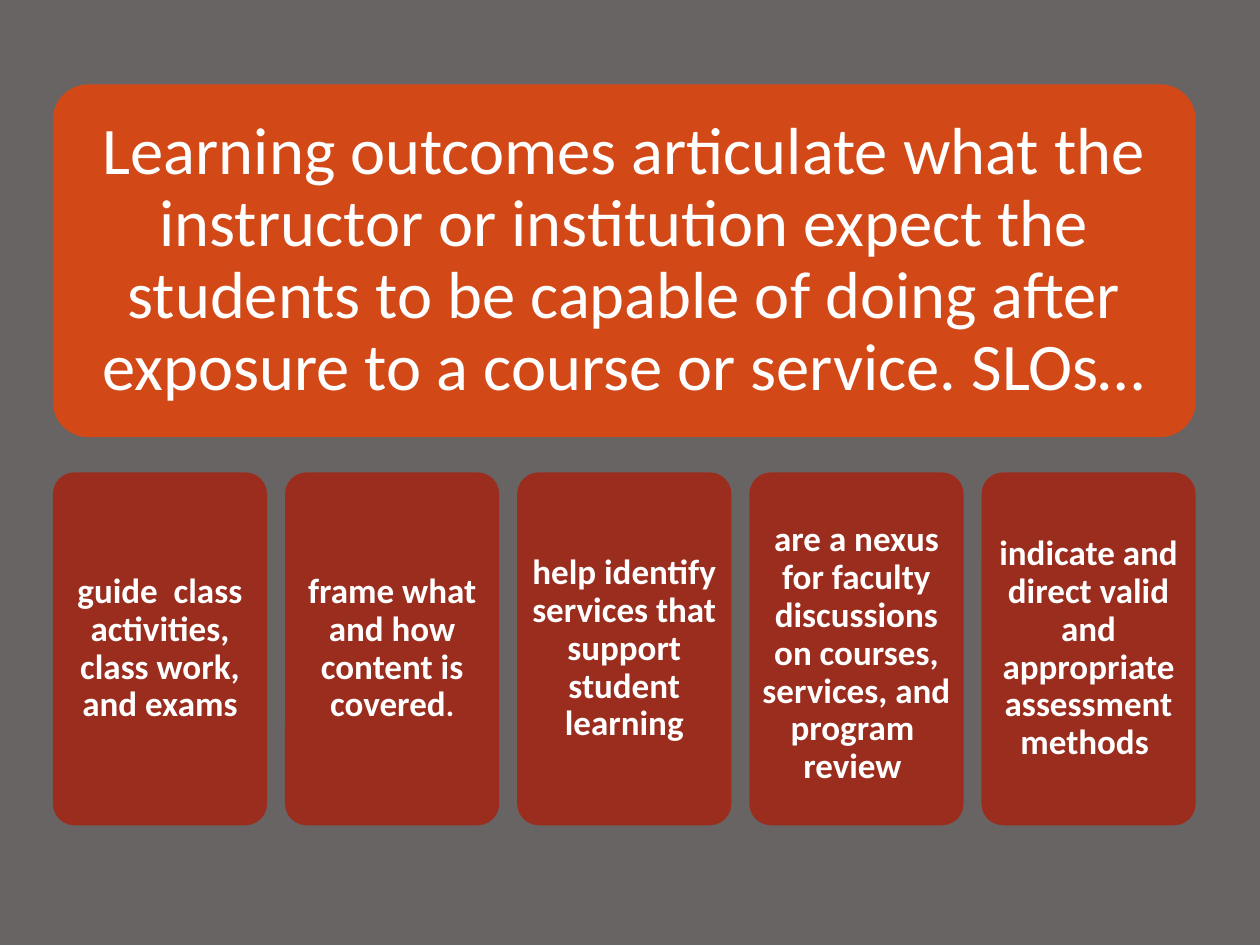
from dataclasses import dataclass

from pptx import Presentation, util as u
from pptx.dml.color import RGBColor
from pptx.enum import shapes, text

GREY = RGBColor(0x69, 0x64, 0x64)
ORANGE = RGBColor(0xD3, 0x48, 0x17)
RED = RGBColor(0x9B, 0x2D, 0x1F)
WHITE = RGBColor(0xFF, 0xFF, 0xFF)

WIDE, HIGH = 10, 7.5
LEFT, SPAN = 0.42, 9.07
TOP, ROW, STEP = 0.67, 2.8, 3.08
COLS, CARD = 5, 1.7
PITCH = (SPAN - CARD) / (COLS - 1)


@dataclass
class Run:
    words: str
    size: float = 20
    bold: bool = True


@dataclass
class Box:
    """A rounded box on the grid; drop is extra room above its text."""
    col: int
    row: int
    runs: list[Run]
    fill: RGBColor = RED
    width: float = CARD
    pad: float = 0.03
    drop: float = 0


BOXES = [
    Box(0, 0, [Run("Learning outcomes articulate what the instructor or "
                   "institution expect the students to be capable of doing "
                   "after exposure to a course or service. SLOs…", 38, False)],
        ORANGE, SPAN, 0.08),
    Box(0, 1, [Run("guide  class activities, class work, and exams")]),
    Box(1, 1, [Run("frame what and how content is covered"), Run(".", 18)]),
    Box(2, 1, [Run("help identify services that support student learning")]),
    Box(3, 1, [Run("are a nexus for faculty discussions on courses, "
                   "services, and program  review ")], drop=0.08),
    Box(4, 1, [Run("indicate and direct valid and appropriate "
                   "assessment methods ")]),
]


def draw(slide, box: Box) -> None:
    shape = slide.shapes.add_shape(
        shapes.MSO_SHAPE.ROUNDED_RECTANGLE,
        u.Inches(LEFT + box.col * PITCH), u.Inches(TOP + box.row * STEP),
        u.Inches(box.width), u.Inches(ROW))
    shape.adjustments[0] = 0.1
    shape.shadow.inherit = False
    shape.fill.solid()
    shape.fill.fore_color.rgb = box.fill
    shape.line.fill.background()

    frame = shape.text_frame
    pad = u.Inches(box.pad)
    look = {"word_wrap": True, "vertical_anchor": text.MSO_ANCHOR.MIDDLE,
            "margin_left": pad, "margin_right": pad, "margin_bottom": pad,
            "margin_top": pad + u.Inches(box.drop)}
    for name, value in look.items():
        setattr(frame, name, value)

    para = frame.paragraphs[0]
    para.alignment = text.PP_ALIGN.CENTER
    para.line_spacing = 0.9
    for item in box.runs:
        run = para.add_run()
        run.text = item.words
        style = {"name": "Calibri", "size": u.Pt(item.size), "bold": item.bold}
        for name, value in style.items():
            setattr(run.font, name, value)
        run.font.color.rgb = WHITE


def main() -> None:
    deck = Presentation()
    deck.slide_width, deck.slide_height = u.Inches(WIDE), u.Inches(HIGH)
    slide = deck.slides.add_slide(deck.slide_layouts[6])
    slide.background.fill.solid()
    slide.background.fill.fore_color.rgb = GREY
    for box in BOXES:
        draw(slide, box)
    deck.save("out.pptx")


if __name__ == "__main__":
    main()
